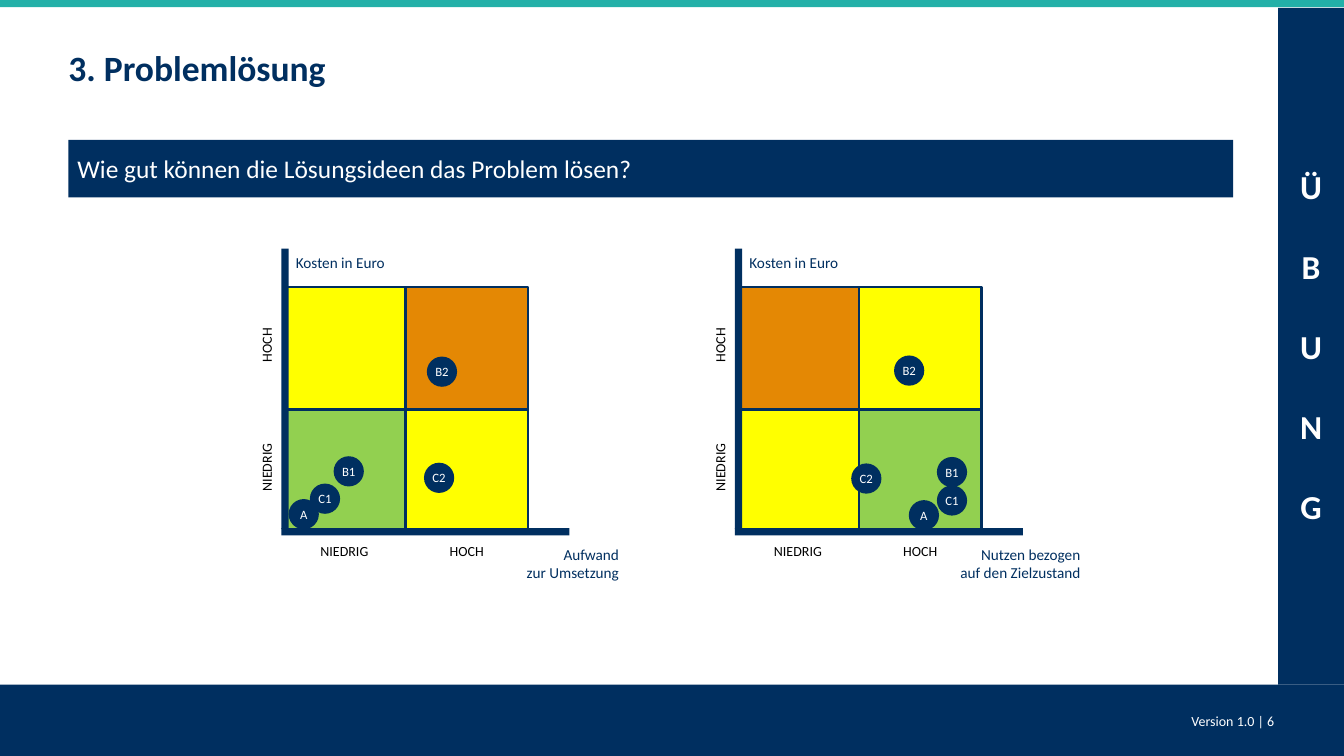
import pptx
import pptx.util
import pptx.dml.color
import pptx.enum.shapes
import pptx.enum.text

Cm = pptx.util.Cm
Pt = pptx.util.Pt
PRESET = pptx.enum.shapes.MSO_SHAPE
ALIGN = pptx.enum.text.PP_ALIGN
ANCHOR = pptx.enum.text.MSO_ANCHOR

COLORS = {"navy": "002F60", "teal": "23B0A8", "white": "FFFFFF", "black": "000000",
          "yellow": "FFFF00", "orange": "E48804", "green": "92D050"}
WIDTH, HEIGHT = 37.34, 21.01
CELL = 3.4
BUBBLE = 0.84
LEVELS = ("NIEDRIG", "HOCH")
LABEL_WIDTHS = {"NIEDRIG": 1.88, "HOCH": 1.52}

EFFORT = {
    "cells": (("yellow", "orange"), ("green", "yellow")),
    "axis_label": ("Aufwand\nzur Umsetzung", 6.38, 3.2),
    "ideas": {"B1": (1.4, 4.7), "B2": (3.99, 1.93), "C1": (0.74, 5.46),
              "C2": (3.91, 4.88), "A": (0.15, 5.89)},
}
BENEFIT = {
    "cells": (("orange", "yellow"), ("yellow", "green")),
    "axis_label": ("Nutzen bezogen\nauf den Zielzustand", 5.79, 4.01),
    "ideas": {"B1": (5.56, 4.72), "B2": (4.37, 1.9), "C1": (5.56, 5.51),
              "C2": (3.18, 4.9), "A": (4.78, 5.92)},
}


def rgb(color):
    """Return the named colour as an RGB value."""
    return pptx.dml.color.RGBColor.from_string(COLORS[color])


def write(holder, text, size, color, align=ALIGN.LEFT, bold=False, gap=0, **frame_format):
    """Fill a shape with formatted paragraphs."""
    frame = holder.text_frame
    frame.text = text
    for name, value in frame_format.items():
        setattr(frame, name, value)
    font_format = {"name": "Calibri", "size": Pt(size), "bold": bold}
    for index, paragraph in enumerate(frame.paragraphs):
        paragraph.alignment = align
        paragraph.space_before = Pt(gap if index else 0)
        for run in paragraph.runs:
            for name, value in font_format.items():
                setattr(run.font, name, value)
            run.font.color.rgb = rgb(color)


def add_area(slide, left, top, width, height, color, outline=None, preset=PRESET.RECTANGLE):
    """Add a filled shape, outlined only on request."""
    area = slide.shapes.add_shape(preset, Cm(left), Cm(top), Cm(width), Cm(height))
    area.shadow.inherit = False
    area.fill.solid()
    area.fill.fore_color.rgb = rgb(color)
    if outline:
        area.line.color.rgb = rgb(outline)
        area.line.width = Pt(2)
    else:
        area.line.fill.background()
    return area


def add_label(slide, left, top, width, height, text, size, color, align=ALIGN.LEFT, **frame_format):
    """Add a text box that keeps its lines unwrapped."""
    label = slide.shapes.add_textbox(Cm(left), Cm(top), Cm(width), Cm(height))
    write(label, text, size, color, align, word_wrap=False, **frame_format)
    return label


def add_frame(slide):
    """Add the stripe, the footer and the exercise bar."""
    add_area(slide, 0, 0, WIDTH, 0.2, "teal")
    add_area(slide, 0, 19.03, WIDTH, HEIGHT - 19.03, "navy")
    no_margins = dict.fromkeys(("margin_left", "margin_top", "margin_right", "margin_bottom"), 0)
    add_label(slide, 32.69, 19.79, 2.72, 0.48, "Version 1.0 | 6", 11, "white",
              ALIGN.RIGHT, **no_margins)
    exercise_bar = add_area(slide, 35.51, 0.22, WIDTH - 35.51, 18.81, "navy")
    write(exercise_bar, "\n".join("ÜBUNG"), 26.4, "white", ALIGN.CENTER, bold=True,
          gap=31.3, vertical_anchor=ANCHOR.MIDDLE)


def add_heading(slide, left, width):
    """Place the title and the question banner."""
    title = slide.shapes.title
    place = {"left": left, "top": -0.03, "width": 33.6, "height": 3.81}
    for name, value in place.items():
        setattr(title, name, Cm(value))
    write(title, "3. Problemlösung", 28, "navy", bold=True, margin_left=0, margin_right=0,
          margin_top=0, margin_bottom=0, vertical_anchor=ANCHOR.MIDDLE, word_wrap=True,
          auto_size=pptx.enum.text.MSO_AUTO_SIZE.NONE)
    question = add_area(slide, left, 3.89, width, 1.6, "navy")
    write(question, "Wie gut können die Lösungsideen das Problem lösen?", 20, "white",
          vertical_anchor=ANCHOR.MIDDLE, word_wrap=True)


def add_matrix(slide, left, top, matrix):
    """Draw a two-by-two matrix with axes, labels and ideas."""
    for row, row_colors in enumerate(matrix["cells"]):
        for column, color in enumerate(row_colors):
            add_area(slide, left + column * CELL, top + row * CELL, CELL, CELL, color, "navy")
    add_area(slide, left - 0.05, top + 6.7, 8, 0.2, "navy")
    add_area(slide, left - 0.05, top - 1.07, 0.2, 7.8, "navy")

    for index, level in enumerate(LEVELS):
        width, height = LABEL_WIDTHS[level], 0.74
        across = (left + (index + 0.5) * CELL, top + 7.33, 0)
        upward = (left - 0.46, top + (1.5 - index) * CELL - 0.09, 270)
        for center_x, center_y, rotation in (across, upward):
            level_label = add_label(slide, center_x - width / 2, center_y - height / 2,
                                    width, height, level, 11, "black", ALIGN.CENTER)
            level_label.rotation = rotation

    text, offset, width = matrix["axis_label"]
    add_label(slide, left + offset, top + 7.04, width, 1.27, text, 12, "navy", ALIGN.RIGHT)
    add_label(slide, left + 0.1, top - 1.07, 3.07, 0.76, "Kosten in Euro", 12, "navy")

    margins = dict.fromkeys(("margin_left", "margin_top", "margin_right", "margin_bottom"), Cm(0.1))
    for idea, (x, y) in matrix["ideas"].items():
        bubble = add_area(slide, left + x, top + y, BUBBLE, BUBBLE, "navy", preset=PRESET.OVAL)
        write(bubble, idea, 10, "white", ALIGN.CENTER, vertical_anchor=ANCHOR.MIDDLE,
              word_wrap=False, **margins)


def main():
    """Build and save the slide."""
    deck = pptx.Presentation()
    deck.slide_width, deck.slide_height = Cm(WIDTH), Cm(HEIGHT)
    slide = deck.slides.add_slide(deck.slide_layouts[5])
    add_frame(slide)
    add_heading(slide, 1.9, 32.36)
    for left, matrix in ((7.87, EFFORT), (20.47, BENEFIT)):
        add_matrix(slide, left, 7.98, matrix)
    deck.save("out.pptx")


if __name__ == "__main__":
    main()
